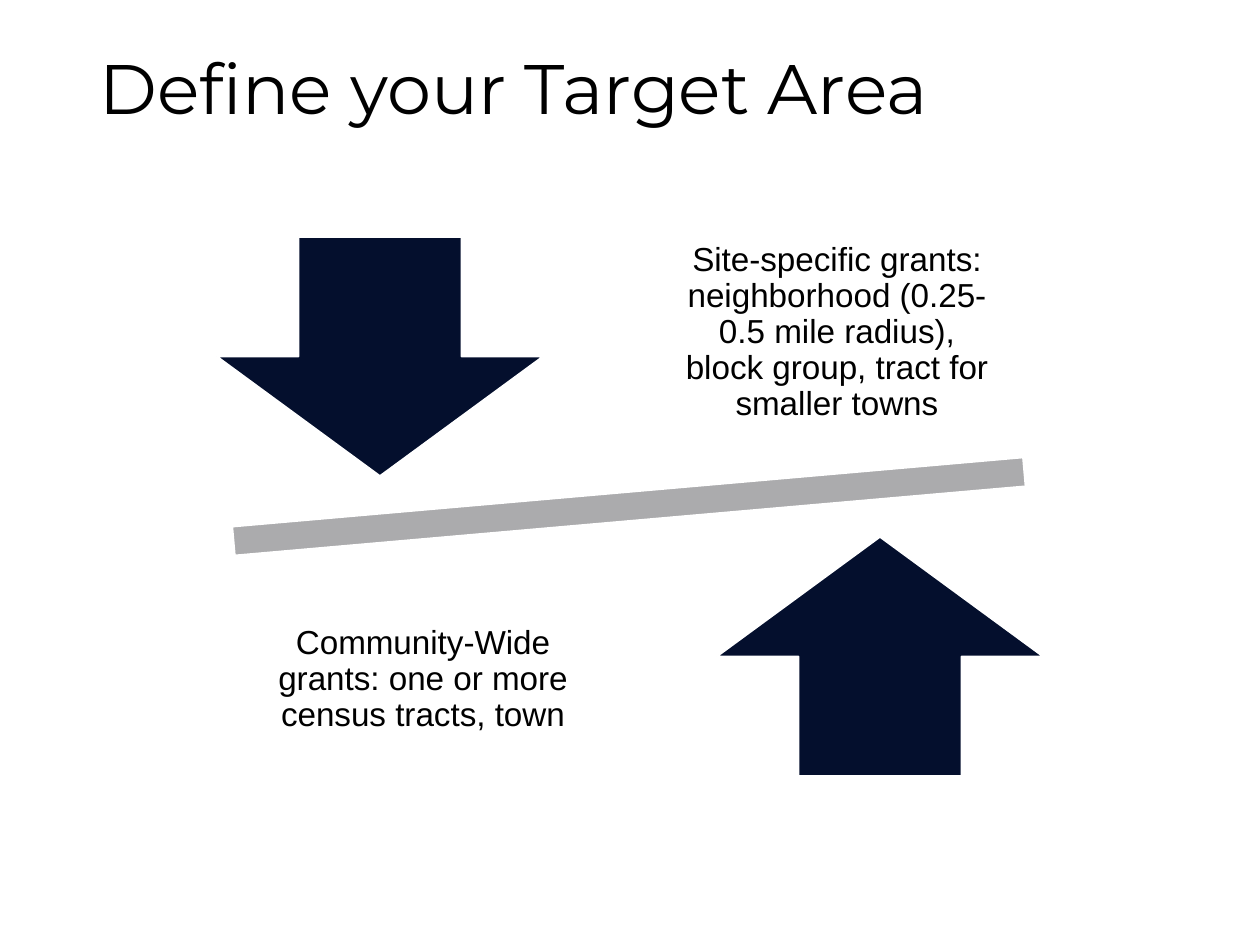
from pptx import Presentation
from pptx.dml.color import RGBColor
from pptx.enum.shapes import MSO_SHAPE
from pptx.enum.text import MSO_ANCHOR, PP_ALIGN
from pptx.util import Pt

MINUS, DOWN, UP = MSO_SHAPE.MATH_MINUS, MSO_SHAPE.DOWN_ARROW, MSO_SHAPE.UP_ARROW
LEFT, CENTER = PP_ALIGN.LEFT, PP_ALIGN.CENTER
MIDDLE = MSO_ANCHOR.MIDDLE

SCALE = 914400 / 126
SLIDE_SIZE = (1260, 945)
NAVY, GRAY, WHITE, BLACK = "040F2D", "ABABAD", "FFFFFF", "000000"

SHAPES = [
    (MINUS, (89, 445, 1080, 123), GRAY, 355),
    (DOWN, (217, 237, 326, 239), NAVY, 0),
    (UP, (717, 537, 326, 239), NAVY, 0),
]
TEXTS = [
    ("Define your Target Area", (87, 0, 1124, 183), "Montserrat", 40, LEFT, (13, 6)),
    ("Site-specific grants: neighborhood (0.25-0.5 mile radius), "
     "block group, tract for smaller towns",
     (663, 207, 348, 252), "Arial", 19, CENTER, (19, 19)),
    ("Community-Wide grants: one or more census tracts, town",
     (249, 554, 348, 252), "Arial", 19, CENTER, (19, 19)),
]


def emu(px):
    return round(px * SCALE)


def color(value):
    return RGBColor.from_string(value)


def add_shape(slide, kind, box, fill, rotation):
    shape = slide.shapes.add_shape(kind, *map(emu, box))
    shape.shadow.inherit = False
    shape.rotation = rotation
    shape.fill.solid()
    shape.fill.fore_color.rgb = color(fill)
    shape.line.color.rgb = color(WHITE)
    shape.line.width = Pt(1)


def add_text(slide, text, box, font_name, size, alignment, insets):
    frame = slide.shapes.add_textbox(*map(emu, box)).text_frame
    frame.word_wrap = True
    frame.vertical_anchor = MIDDLE
    frame.margin_left = frame.margin_right = emu(insets[0])
    frame.margin_top = frame.margin_bottom = emu(insets[1])
    paragraph = frame.paragraphs[0]
    paragraph.alignment = alignment
    paragraph.line_spacing = 0.9
    run = paragraph.add_run()
    run.text = text
    run.font.name = font_name
    run.font.size = Pt(size)
    run.font.color.rgb = color(BLACK)


def main():
    presentation = Presentation()
    presentation.slide_width, presentation.slide_height = map(emu, SLIDE_SIZE)
    slide = presentation.slides.add_slide(presentation.slide_layouts[6])
    for item in SHAPES:
        add_shape(slide, *item)
    for item in TEXTS:
        add_text(slide, *item)
    presentation.save("out.pptx")


if __name__ == "__main__":
    main()
